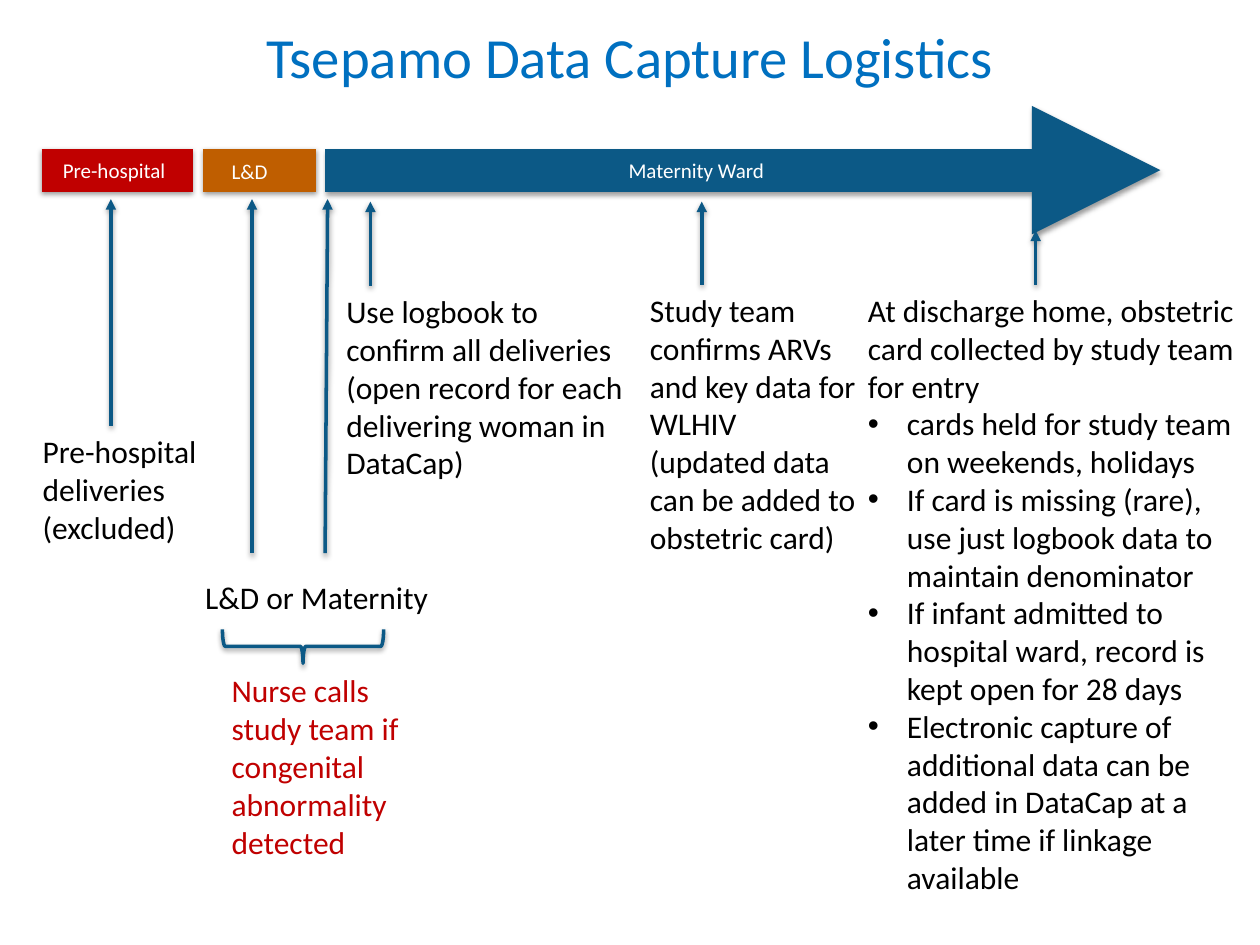
from lxml.etree import SubElement
from pptx import Presentation
from pptx.dml.color import RGBColor
from pptx.enum.shapes import MSO_CONNECTOR, MSO_SHAPE
from pptx.enum.text import MSO_ANCHOR, PP_ALIGN
from pptx.oxml.ns import qn
from pptx.util import Inches, Pt

BLUE = RGBColor(0x0C, 0x59, 0x86)
TITLE_BLUE = RGBColor(0x00, 0x70, 0xC0)
RED = RGBColor(0xC0, 0x00, 0x00)
ORANGE = RGBColor(0xBF, 0x5E, 0x00)
BLACK = RGBColor(0x00, 0x00, 0x00)
WHITE = RGBColor(0xFF, 0xFF, 0xFF)
FONT = "Calibri"
HEAD_Y = 1.58  # arrow tips just below the timeline


def add_shadow(shape):
    effects = SubElement(shape._element.spPr, qn("a:effectLst"))
    shadow = SubElement(effects, qn("a:outerShdw"), blurRad=str(Pt(3.1)),
                        dist=str(Pt(1.6)), dir="5400000", rotWithShape="0")
    color = SubElement(shadow, qn("a:srgbClr"), val="000000")
    SubElement(color, qn("a:alpha"), val="38000")


def add_line(page, start, end, color=BLUE, weight=2, arrow=True):
    line = page.shapes.add_connector(
        MSO_CONNECTOR.STRAIGHT, *[Inches(v) for v in (*start, *end)])
    line.line.color.rgb = color
    line.line.width = Pt(weight)
    if arrow:
        SubElement(line.line._get_or_add_ln(), qn("a:tailEnd"), type="triangle")
    add_shadow(line)


def add_bullet(para):
    props = para._p.get_or_add_pPr()
    props.set("marL", str(Inches(0.31)))
    props.set("indent", str(Inches(-0.31)))
    SubElement(props, qn("a:buFont"), typeface="Arial")
    SubElement(props, qn("a:buChar"), char="•")


def add_text(page, box, texts, size=18, color=BLACK, bullets_from=None):
    """Place one paragraph per text; those from bullets_from on are bulleted."""
    frame = page.shapes.add_textbox(*[Inches(v) for v in box]).text_frame
    frame.word_wrap = True
    for index, text in enumerate(texts):
        para = frame.paragraphs[0] if index == 0 else frame.add_paragraph()
        if bullets_from is not None and index >= bullets_from:
            add_bullet(para)
        span = para.add_run()
        span.text = text
        span.font.name = FONT
        span.font.size = Pt(size)
        span.font.color.rgb = color
    return frame


def add_title(page, box):
    frame = add_text(page, box, ["Tsepamo Data Capture Logistics"], 32.4, TITLE_BLUE)
    frame.vertical_anchor = MSO_ANCHOR.MIDDLE
    frame.paragraphs[0].alignment = PP_ALIGN.CENTER


def add_timeline(page, y):
    # Stage: bar start, bar end, colour, arrow, label, label box
    stages = [
        (2.58, 9.21, BLUE, True, "Maternity Ward", (4.89, y - 0.15, 1.54, 0.3)),
        (1.61, 2.51, ORANGE, False, "L&D", (1.74, y - 0.14, 1.19, 0.3)),
        (0.33, 1.53, RED, False, "Pre-hospital", (0.4, y - 0.15, 1.19, 0.3)),
    ]
    for start, end, color, arrow, label, box in stages:
        add_line(page, (start, y), (end, y), color, 24.5, arrow)
        add_text(page, box, [label], 12, WHITE)


def add_step(page, box, texts, arrow_x, arrow_top, bullets_from=None):
    """A note with an arrow rising from its top edge."""
    add_line(page, (arrow_x, box[1]), (arrow_x, arrow_top))
    add_text(page, box, texts, bullets_from=bullets_from)


def add_nurse_call(page, left, top):
    # Arrows to L&D and to the start of the maternity ward
    add_line(page, (2, 4.39), (2, HEAD_Y))
    add_line(page, (2.58, 4.39), (2.6, HEAD_Y))
    add_text(page, (left, top, 2.06, 0.4), ["L&D or Maternity"])
    # Brace, turned to point down at the note
    brace = page.shapes.add_shape(
        MSO_SHAPE.RIGHT_BRACE, Inches(left + 0.74), Inches(top - 0.05),
        Inches(0.27), Inches(1.28))
    brace.rotation = 90
    brace.fill.background()
    brace.line.color.rgb = BLUE
    brace.line.width = Pt(2)
    add_shadow(brace)
    add_text(page, (left + 0.21, top + 0.74, 1.87, 1.62),
             ["Nurse calls study team if congenital abnormality detected"], color=RED)


def main():
    deck = Presentation()
    deck.slide_width, deck.slide_height = Inches(10), Inches(7.5)
    page = deck.slides.add_slide(deck.slide_layouts[6])

    add_title(page, (0, 0.12, 10, 0.64))
    add_timeline(page, 1.35)
    add_step(page, (0.24, 3.38, 1.87, 1.01),
             ["Pre-hospital deliveries (excluded)"], 0.88, HEAD_Y)
    add_nurse_call(page, 1.53, 4.54)
    add_step(page, (2.65, 2.27, 2.44, 1.62),
             ["Use logbook to confirm all deliveries",
              "(open record for each delivering woman in DataCap)"], 2.94, 1.6)
    add_step(page, (5.06, 2.26, 1.83, 2.52),
             ["Study team confirms ARVs and key data for WLHIV",
              "(updated data can be added to obstetric card)"], 5.57, 1.6)
    add_step(page, (6.79, 2.26, 3.16, 4.95),
             ["At discharge home, obstetric card collected by study team for entry",
              "cards held for study team on weekends, holidays",
              "If card is missing (rare), use just logbook data to maintain denominator",
              "If infant admitted to hospital ward, record is kept open for 28 days",
              "Electronic capture of additional data can be added in DataCap at a "
              "later time if linkage available"], 8.22, 1.83, bullets_from=1)
    deck.save("out.pptx")


if __name__ == "__main__":
    main()
